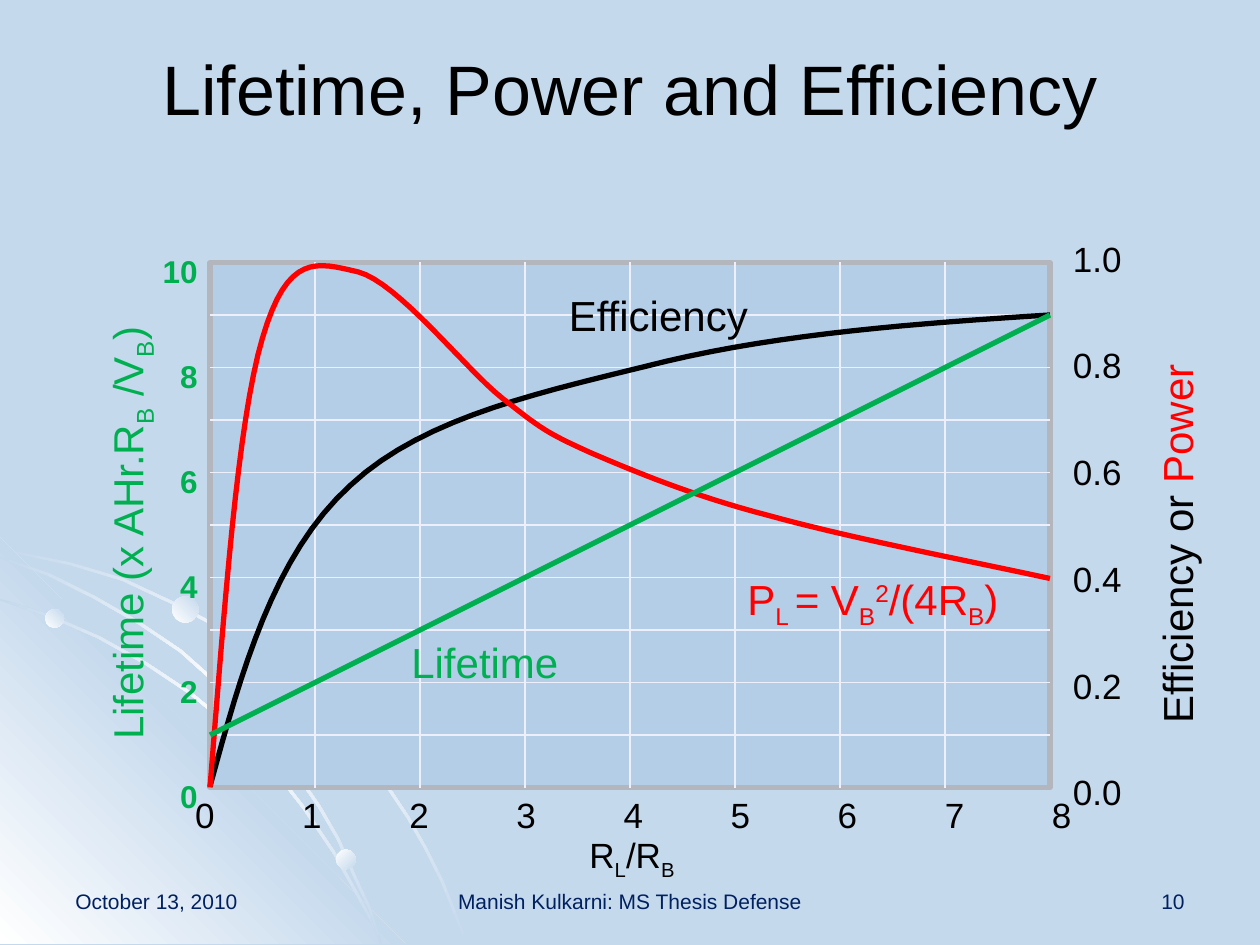
"""Build the slide on lifetime, power and efficiency against load resistance."""
import copy
from dataclasses import dataclass

import pptx
import pptx.dml.color
import pptx.enum.shapes
import pptx.enum.text
import pptx.oxml.ns
import pptx.util

RGBColor = pptx.dml.color.RGBColor
Align = pptx.enum.text.PP_ALIGN
Point = tuple[float, float]

EMU_PER_PX = 7620
FONT = "Arial"
SKY = RGBColor(0xC5, 0xD9, 0xED)
WHITE = RGBColor(0xFF, 0xFF, 0xFF)
BLACK = RGBColor(0x00, 0x00, 0x00)
NAVY = RGBColor(0x00, 0x20, 0x60)
RED = RGBColor(0xFF, 0x00, 0x00)
GREEN = RGBColor(0x00, 0xB0, 0x50)
PANEL = RGBColor(0xB4, 0xCE, 0xE8)
FRAME = RGBColor(0xB4, 0xB6, 0xBD)
GRID = RGBColor(0xED, 0xF0, 0xFA)

LEFT, TOP, WIDTH, HEIGHT = 200, 250, 800, 500
RIGHT, BOTTOM = LEFT + WIDTH, TOP + HEIGHT
COLUMN, ROW = 100, 50
SUB, SUPER = -25000, 30000


@dataclass(frozen=True)
class Span:
    text: str
    baseline: int = 0
    color: RGBColor | None = None


@dataclass(frozen=True)
class Label:
    frame: tuple[int, int, int, int]
    lines: list[list[Span]]
    size: int
    color: RGBColor
    align: Align = Align.LEFT
    wrap: bool = False
    bold: bool = False
    rotation: int = 0
    gap: int = 0
    leading: int | None = None


@dataclass(frozen=True)
class Curve:
    start: Point
    segments: list[tuple[Point, Point, Point]]
    color: RGBColor


RIBBONS = [
    [(0, 522), (34, 529), (68, 536), (118, 551), (163, 572), (209, 596), (251, 625), (290, 658),
     (326, 694), (360, 733), (390, 778), (407, 808), (422, 838), (434, 868), (446, 899)],
    [(0, 570), (49, 586), (95, 606), (140, 631), (182, 659), (221, 691), (258, 727), (290, 768),
     (319, 811), (343, 854), (355, 876), (364, 899)],
    [(0, 530), (47, 546), (91, 568), (133, 592), (173, 619), (210, 652), (245, 688), (275, 724),
     (305, 767), (323, 798), (338, 832), (353, 864), (364, 899)],
]
WEDGE = [(386, 899), (0, 899), (0, 512)]
BEADS = [(43, 580, 18, 45), (320, 809, 19, 315), (164, 568, 25, 45)]

CURVES = [
    Curve((200, 749), [
        ((230, 640), (260, 529), (334, 462)),
        ((406, 395), (523, 372), (635, 344)),
        ((745, 318), (872, 308), (1000, 300)),
    ], BLACK),
    Curve((200, 750), [
        ((214, 577), (226, 403), (250, 322)),
        ((274, 240), (302, 250), (341, 259)),
        ((379, 269), (442, 350), (478, 379)),
        ((515, 408), (520, 412), (562, 431)),
        ((604, 449), (659, 472), (732, 491)),
        ((804, 511), (902, 530), (1000, 551)),
    ], RED),
]

LABELS = [
    Label((60, 840, 280, 60), [[Span("October 13, 2010")]], 12, NAVY, wrap=True),
    Label((410, 840, 380, 60), [[Span("Manish Kulkarni: MS Thesis Defense")]], 12, NAVY,
          Align.CENTER, wrap=True),
    Label((860, 840, 280, 60), [[Span("10")]], 12, NAVY, Align.RIGHT, wrap=True),
    Label((1010, 220, 71, 557), [[Span(f"{tick / 10:.1f}")] for tick in range(10, -1, -2)],
          20, BLACK, gap=37),
    Label((140, 230, 60, 557), [[Span(str(tick))] for tick in range(10, -1, -2)],
          18, GREEN, Align.RIGHT, wrap=True, bold=True, gap=36, leading=24),
    *[Label((174 + 102 * tick, 750, 40, 48), [[Span(str(tick))]], 20, BLACK, Align.CENTER)
      for tick in range(9)],
    Label((542, 788, 120, 48), [[Span("R"), Span("L", SUB), Span("/R"), Span("B", SUB)]],
          20, BLACK, Align.CENTER),
    Label((936, 485, 370, 61), [[Span("Efficiency or "), Span("Power", color=RED)]],
          24, BLACK, rotation=270),
    Label((-92, 473, 426, 61),
          [[Span("Lifetime (x AHr.R"), Span("B", SUB), Span(" /V"), Span("B", SUB), Span(")")]],
          24, GREEN, rotation=270),
    Label((380, 600, 166, 61), [[Span("Lifetime")]], 24, GREEN),
    Label((530, 270, 197, 61), [[Span("Efficiency")]], 24, BLACK),
    Label((700, 540, 278, 60),
          [[Span("P"), Span("L ", SUB), Span("= V"), Span("B", SUB), Span("2", SUPER),
            Span("/(4R"), Span("B", SUB), Span(")")]], 24, RED),
]


def px(length: float) -> pptx.util.Emu:
    """Turn px into EMU."""
    return pptx.util.Emu(round(length * EMU_PER_PX))


def style_font(font, size: int, color: RGBColor, bold: bool = False) -> None:
    """Set the face, size, colour and weight of a font."""
    font.name, font.size, font.bold = FONT, pptx.util.Pt(size), bold
    font.color.rgb = color


def add_outline(page, points: list[Point], closed: bool):
    """Add a freeform through the given points."""
    corners = [(px(x), px(y)) for x, y in points]
    builder = page.shapes.build_freeform(*corners[0])
    builder.add_line_segments(corners[1:], close=closed)
    shape = builder.convert_to_shape()
    shape.shadow.inherit = False
    return shape


def fill_gradient(shape, colors: list[RGBColor], angle: int) -> None:
    """Fill a borderless shape with evenly spaced gradient colours."""
    shape.line.fill.background()
    shape.fill.gradient()
    shape.fill.gradient_angle = angle
    stop_list = shape.element.spPr.find(".//" + pptx.oxml.ns.qn("a:gsLst"))
    for _ in colors[2:]:
        stop_list.append(copy.deepcopy(stop_list[0]))
    for index, (stop, color) in enumerate(zip(shape.fill.gradient_stops, colors)):
        stop.color.rgb = color
        stop.position = index / (len(colors) - 1)


def add_ribbon(page, edge: list[Point]) -> None:
    """Add a thin band below a sequence of edge points."""
    inner = [(max(0, x - 2), min(899, y + 2)) for x, y in reversed(edge)]
    fill_gradient(add_outline(page, edge + inner, True), [SKY, WHITE, SKY], 315)


def add_backdrop(page) -> None:
    """Draw the corner decoration."""
    add_ribbon(page, RIBBONS[0])
    fill_gradient(add_outline(page, WEDGE, True), [WHITE, SKY, WHITE], 45)
    for edge in RIBBONS[1:]:
        add_ribbon(page, edge)
    for x, y, size, angle in BEADS:
        bead = page.shapes.add_shape(
            pptx.enum.shapes.MSO_SHAPE.OVAL, px(x), px(y), px(size), px(size))
        bead.shadow.inherit = False
        fill_gradient(bead, [WHITE, SKY], angle)


def add_line(page, start: Point, end: Point, color: RGBColor, weight: float):
    """Add a straight connector without a shadow."""
    line = page.shapes.add_connector(
        pptx.enum.shapes.MSO_CONNECTOR.STRAIGHT, *map(px, start + end))
    line.line.color.rgb, line.line.width = color, pptx.util.Pt(weight)
    line.element.spPr.append(pptx.oxml.parse_xml(
        f"<a:effectLst {pptx.oxml.ns.nsdecls('a')}/>"))
    return line


def add_plot(page) -> None:
    """Draw the plot panel, its grid and the three graphs."""
    panel = page.shapes.add_shape(
        pptx.enum.shapes.MSO_SHAPE.RECTANGLE, px(LEFT), px(TOP), px(WIDTH), px(HEIGHT))
    panel.shadow.inherit = False
    panel.fill.solid()
    panel.fill.fore_color.rgb = PANEL
    panel.line.color.rgb, panel.line.width = FRAME, pptx.util.Pt(3)
    for y in range(TOP + ROW, BOTTOM, ROW):
        line = add_line(page, (LEFT, y), (RIGHT, y), GRID, 0.75)
        if y == TOP + HEIGHT // 2:
            line.begin_connect(panel, 1)
            line.end_connect(panel, 3)
    for x in range(LEFT + COLUMN, RIGHT, COLUMN):
        line = add_line(page, (x, TOP), (x, BOTTOM), GRID, 0.75)
        if x == LEFT + WIDTH // 2:
            line.begin_connect(panel, 0)
            line.end_connect(panel, 2)
    for curve in CURVES:
        add_curve(page, curve)
    add_line(page, (LEFT, BOTTOM - ROW), (RIGHT, TOP + ROW), GREEN, 3)


def add_curve(page, curve: Curve, steps: int = 16) -> None:
    """Draw a chain of cubic segments as a fine open outline."""
    points = [curve.start]
    for segment in curve.segments:
        controls = (points[-1], *segment)
        for step in range(1, steps + 1):
            t = step / steps
            weights = ((1 - t) ** 3, 3 * t * (1 - t) ** 2, 3 * t * t * (1 - t), t ** 3)
            points.append(tuple(
                sum(w * control[axis] for w, control in zip(weights, controls))
                for axis in (0, 1)))
    shape = add_outline(page, points, False)
    shape.fill.background()
    shape.line.color.rgb, shape.line.width = curve.color, pptx.util.Pt(3)


def add_label(page, label: Label) -> None:
    """Add a text box with one paragraph per line of spans."""
    box = page.shapes.add_textbox(*map(px, label.frame))
    box.rotation = label.rotation
    frame = box.text_frame
    frame.word_wrap = label.wrap
    for index, line in enumerate(label.lines):
        para = frame.add_paragraph() if index else frame.paragraphs[0]
        para.alignment = label.align
        para.space_after = pptx.util.Pt(label.gap)
        if label.leading:
            para.line_spacing = pptx.util.Pt(label.leading)
        for part in line:
            span = para.add_run()
            span.text = part.text
            style_font(span.font, label.size, part.color or label.color, label.bold)
            if part.baseline:
                span._r.get_or_add_rPr().set("baseline", str(part.baseline))


def add_title(page, text: str) -> None:
    """Place and format the title placeholder."""
    title = page.shapes.title
    title.left, title.top, title.width, title.height = map(px, (60, 8, 1080, 150))
    title.text_frame.text = text
    title.text_frame.vertical_anchor = pptx.enum.text.MSO_ANCHOR.MIDDLE
    para = title.text_frame.paragraphs[0]
    para.alignment = Align.CENTER
    style_font(para.runs[0].font, 40, BLACK)


def main() -> None:
    """Build and save the deck."""
    deck = pptx.Presentation()
    deck.slide_width, deck.slide_height = px(1200), px(900)
    page = deck.slides.add_slide(deck.slide_layouts[5])
    page.background.fill.solid()
    page.background.fill.fore_color.rgb = SKY
    add_backdrop(page)
    add_title(page, "Lifetime, Power and Efficiency")
    add_plot(page)
    for label in LABELS:
        add_label(page, label)
    deck.save("out.pptx")


if __name__ == "__main__":
    main()
